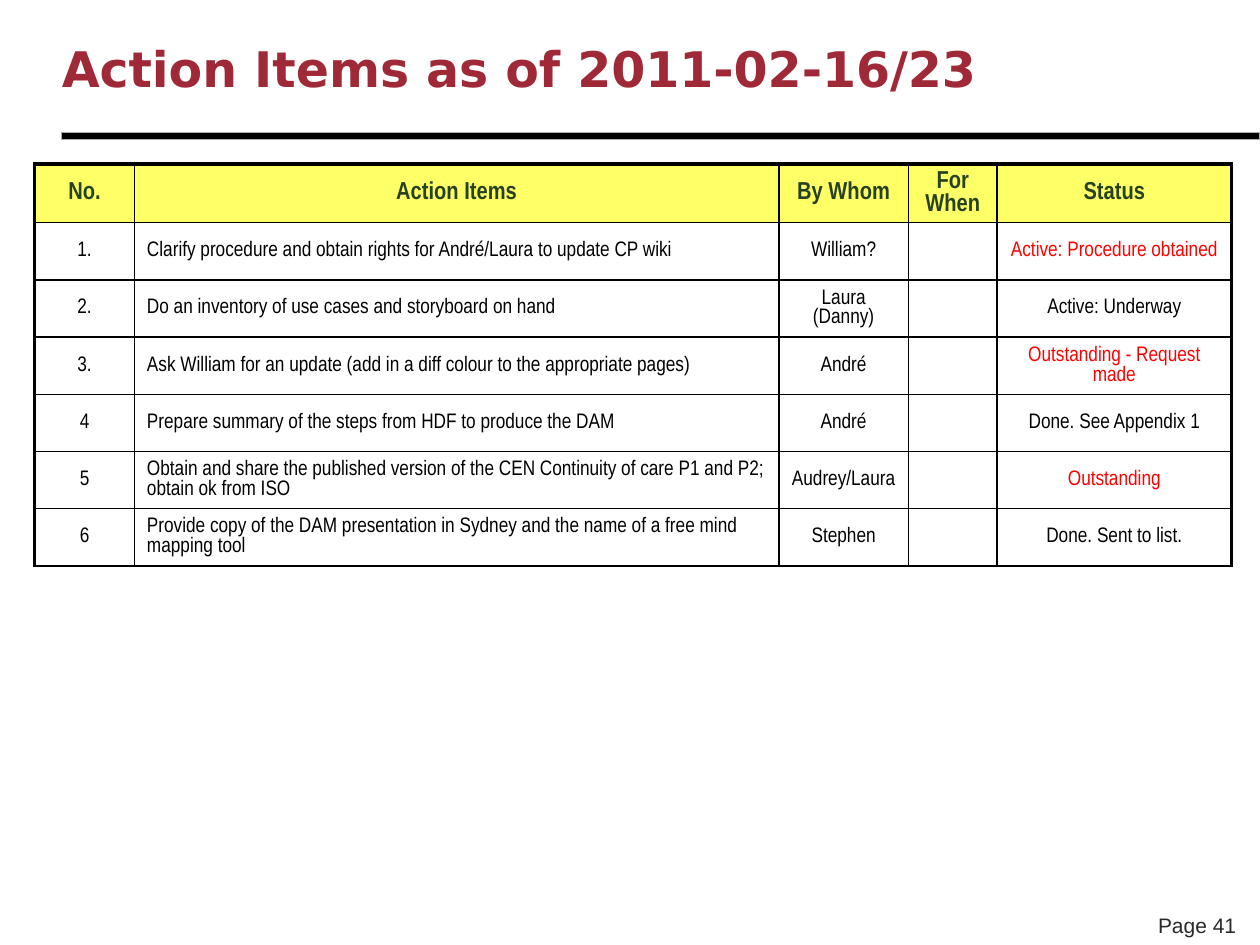
"""Build the action items slide with its status table."""
from pptx import Presentation
from pptx.dml.color import RGBColor as Rgb
from pptx.enum.shapes import MSO_SHAPE as Shape
from pptx.enum.text import MSO_ANCHOR as Anchor, PP_ALIGN as Align
from pptx.oxml import parse_xml
from pptx.oxml.ns import nsdecls
from pptx.util import Pt

TITLE = "Action Items as of 2011-02-16/23"
PAGE = "Page 41"
HEAD = ["No.", "Action Items", "By Whom", "For When", "Status"]
ITEMS = [
    ("1.", "Clarify procedure and obtain rights for André/Laura to update CP wiki",
     "William?", "", "Active: Procedure obtained"),
    ("2.", "Do an inventory of use cases and storyboard on hand",
     "Laura (Danny)", "", "Active: Underway"),
    ("3.", "Ask William for an update (add in a diff colour to the appropriate pages)",
     "André", "", "Outstanding - Request made"),
    ("4", "Prepare summary of the steps from HDF to produce the DAM",
     "André", "", "Done. See Appendix 1"),
    ("5", "Obtain and share the published version of the CEN Continuity of care "
     "P1 and P2; obtain ok from ISO", "Audrey/Laura", "", "Outstanding"),
    ("6", "Provide copy of the DAM presentation in Sydney and the name of a free "
     "mind mapping tool", "Stephen", "", "Done. Sent to list."),
]
ALERTS = {"Active: Procedure obtained", "Outstanding - Request made", "Outstanding"}
COLS = [57, 368.3, 74, 50.8, 133.8]
HEAD_H, ROW_H = 33.6, 32.7

THEME = {
    "title": ("DejaVu Sans", 28, "9F2936", True),
    "head": ("Arial Narrow", 14, "274221", True),
    "body": ("Arial Narrow", 12, "000000", False),
    "alert": ("Arial Narrow", 12, "FF0000", False),
    "page": ("Arial", 12, "292929", False),
    "fill": "FFFF66", "rule": "000000", "edge": "ADADAD",
    "thin": 1, "thick": 2.25,
}


def write(frame, text, style, align):
    face, size, tone, bold = THEME[style]
    frame.text = text
    para = frame.paragraphs[0]
    para.alignment = align
    for font in [para.font] + [run.font for run in para.runs]:
        font.name, font.size, font.bold = face, Pt(size), bold
        font.color.rgb = Rgb.from_string(tone)
    return para


def border(cell, thick):
    props = cell._tc.get_or_add_tcPr()
    for spot, side in enumerate("LRTB"):
        width = Pt(THEME["thick" if side in thick else "thin"])
        props.insert(spot, parse_xml(
            f'<a:ln{side} {nsdecls("a")} w="{width}"><a:solidFill>'
            f'<a:srgbClr val="{THEME["rule"]}"/></a:solidFill></a:ln{side}>'))


def add_title(slide):
    title = slide.shapes.title
    title.left, title.top, title.width, title.height = Pt(35.3), Pt(9.4), Pt(612), Pt(59)
    frame = title.text_frame
    frame.margin_left = frame.margin_right = frame.margin_top = frame.margin_bottom = 0
    frame.vertical_anchor = Anchor.MIDDLE
    write(frame, TITLE, "title", Align.LEFT)


def add_rule(slide):
    rule = slide.shapes.add_shape(Shape.RECTANGLE, Pt(35.3), Pt(75.6), Pt(684.7), Pt(4.3))
    rule.shadow.inherit = False
    rule.fill.solid()
    rule.fill.fore_color.rgb = Rgb.from_string(THEME["rule"])
    rule.line.color.rgb = Rgb.from_string(THEME["edge"])
    rule.line.width = Pt(0.75)


def add_items(slide):
    rows = [HEAD, *ITEMS]
    high = HEAD_H + ROW_H * len(ITEMS)
    table = slide.shapes.add_table(len(rows), len(COLS), Pt(19.8), Pt(93.6),
                                   Pt(sum(COLS)), Pt(high)).table
    for col, width in zip(table.columns, COLS):
        col.width = Pt(width)
    for r, row in enumerate(rows):
        table.rows[r].height = Pt(ROW_H if r else HEAD_H)
        for c, text in enumerate(row):
            cell = table.cell(r, c)
            cell.vertical_anchor = Anchor.MIDDLE
            style = "head" if not r else "alert" if text in ALERTS else "body"
            align = Align.LEFT if r and c == 1 else Align.CENTER
            para = write(cell.text_frame, text, style, align)
            if r and not c:
                props = para._p.get_or_add_pPr()
                props.set("marL", str(Pt(18)))
                props.set("indent", str(Pt(-18)))
            if r:
                cell.fill.background()
            else:
                cell.fill.solid()
                cell.fill.fore_color.rgb = Rgb.from_string(THEME["fill"])
            ends = {0: "L", len(COLS) - 1: "R"}
            border(cell, ends.get(c, "") + ("" if r else "T"))


def add_page(slide):
    frame = slide.shapes.add_textbox(Pt(635), Pt(517.7), Pt(78.5), Pt(21.6)).text_frame
    frame.word_wrap = True
    frame.vertical_anchor = Anchor.BOTTOM
    write(frame, PAGE, "page", Align.RIGHT)


def main():
    deck = Presentation()
    deck.slide_width, deck.slide_height = Pt(720), Pt(540)
    slide = deck.slides.add_slide(deck.slide_layouts[5])
    for add in (add_title, add_rule, add_items, add_page):
        add(slide)
    deck.save("out.pptx")


if __name__ == "__main__":
    main()
